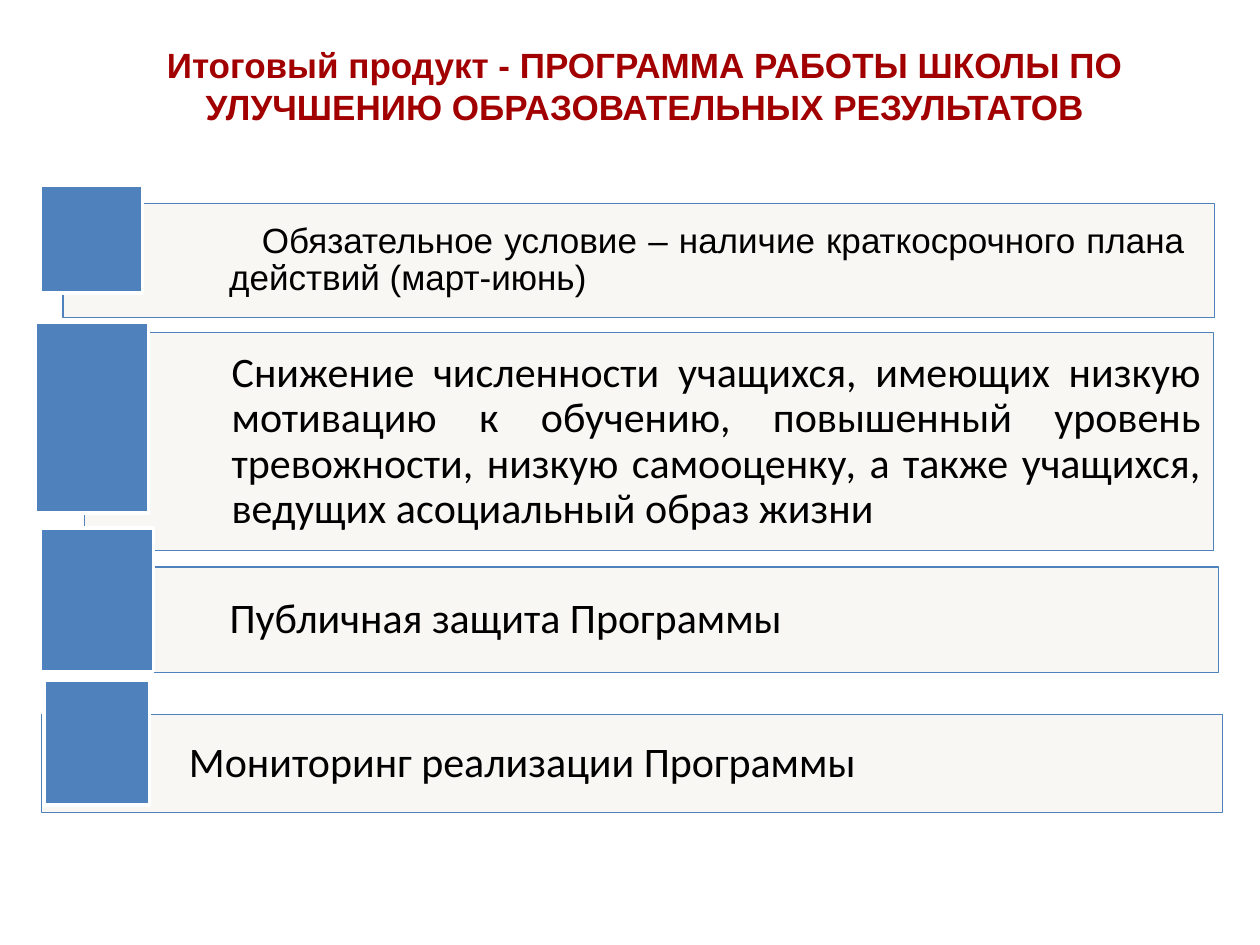
from lxml import etree
from pptx import Presentation
from pptx.dml.color import RGBColor
from pptx.enum.shapes import MSO_SHAPE
from pptx.enum.text import MSO_ANCHOR, MSO_AUTO_SIZE, PP_ALIGN
from pptx.oxml.ns import qn
from pptx.util import Cm, Pt

RECTANGLE = MSO_SHAPE.RECTANGLE
MIDDLE = MSO_ANCHOR.MIDDLE
NO_AUTOFIT = MSO_AUTO_SIZE.NONE
CENTER, LEFT, JUSTIFY = PP_ALIGN.CENTER, PP_ALIGN.LEFT, PP_ALIGN.JUSTIFY

BLUE = RGBColor(0x4F, 0x81, 0xBD)
CREAM = RGBColor(0xEE, 0xEC, 0xE1)
WHITE = RGBColor(0xFF, 0xFF, 0xFF)
BLACK = RGBColor(0x00, 0x00, 0x00)
DARK_RED = RGBColor(0xA2, 0x00, 0x00)

TITLE = "Итоговый продукт - ПРОГРАММА РАБОТЫ ШКОЛЫ ПО УЛУЧШЕНИЮ ОБРАЗОВАТЕЛЬНЫХ РЕЗУЛЬТАТОВ"
TITLE_BOX = (2.9, 0.74, 20.19, 1.96)
TITLE_FONT = {"name": "Arial", "size": Pt(20), "bold": True}
CONDITION_FONT = {"name": "Arial", "size": Pt(20)}
STEP_FONT = {"name": "Calibri", "size": Pt(24)}

# Lengths in cm; insets are left and right, indent is for the first line
STEPS = [
    {"text": "Обязательное условие – наличие краткосрочного плана действий (март-июнь)",
     "panel": (1.27, 4.11, 23.22, 2.29), "marker": (0.81, 3.73, 2.06, 2.18),
     "insets": (3.35, 0.6), "indent": 0.66, "align": JUSTIFY, "font": CONDITION_FONT},
    {"text": "Снижение численности учащихся, имеющих низкую мотивацию к обучению, "
             "повышенный уровень тревожности, низкую самооценку, а также учащихся, "
             "ведущих асоциальный образ жизни",
     "panel": (1.7, 6.71, 22.76, 4.39), "marker": (0.71, 6.5, 2.29, 3.84),
     "insets": (2.97, 0.25), "indent": 0, "align": JUSTIFY, "font": STEP_FONT},
    {"text": "Публичная защита Программы",
     "panel": (1.07, 11.43, 23.5, 2.13), "marker": (0.81, 10.64, 2.29, 2.9),
     "insets": (3.56, 0.25), "indent": 0, "align": JUSTIFY, "font": STEP_FONT},
    {"text": "Мониторинг реализации Программы",
     "panel": (0.84, 14.4, 23.8, 1.98), "marker": (0.89, 13.72, 2.13, 2.51),
     "insets": (2.97, 0.25), "indent": 0, "align": LEFT, "font": STEP_FONT},
]


def set_values(target, values):
    for key, value in values.items():
        setattr(target, key, value)


def write_text(frame, text, color, font_values, frame_values, paragraph_values):
    set_values(frame, {"word_wrap": True, "vertical_anchor": MIDDLE, **frame_values})
    paragraph = frame.paragraphs[0]
    set_values(paragraph, paragraph_values)
    run = paragraph.add_run()
    run.text = text
    set_values(run.font, font_values)
    run.font.color.rgb = color
    return paragraph


def add_title(slide):
    title = slide.shapes.title
    box = [Cm(length) for length in TITLE_BOX]
    set_values(title, dict(zip(("left", "top", "width", "height"), box)))
    write_text(title.text_frame, TITLE, DARK_RED, TITLE_FONT,
               {"auto_size": NO_AUTOFIT}, {"alignment": CENTER})


def add_box(slide, box, fill, line, line_width):
    rectangle = slide.shapes.add_shape(RECTANGLE, *[Cm(length) for length in box])
    rectangle.shadow.inherit = False
    rectangle.fill.solid()
    rectangle.fill.fore_color.rgb = fill
    rectangle.line.color.rgb = line
    rectangle.line.width = Pt(line_width)
    return rectangle


def add_panel(slide, step):
    panel = add_box(slide, step["panel"], CREAM, BLUE, 0.75)
    # Fill at 40 % opacity
    fill_color = panel.fill._xPr.find(qn("a:solidFill"))[0]
    etree.SubElement(fill_color, qn("a:alpha")).set("val", "40000")
    left, right = step["insets"]
    paragraph = write_text(
        panel.text_frame, step["text"], BLACK, step["font"],
        {"margin_left": Cm(left), "margin_right": Cm(right),
         "margin_top": Cm(0.25), "margin_bottom": Cm(0.25)},
        {"alignment": step["align"], "line_spacing": 0.9})
    if step["indent"]:
        paragraph._p.get_or_add_pPr().set("indent", str(Cm(step["indent"])))


def main():
    presentation = Presentation()
    presentation.slide_width = Cm(25.4)
    presentation.slide_height = Cm(19.05)
    slide = presentation.slides.add_slide(presentation.slide_layouts[5])

    add_title(slide)
    # Each step is a text panel with a square marker over its left end
    for step in STEPS:
        add_panel(slide, step)
        add_box(slide, step["marker"], BLUE, WHITE, 2)

    presentation.save("out.pptx")


if __name__ == "__main__":
    main()
